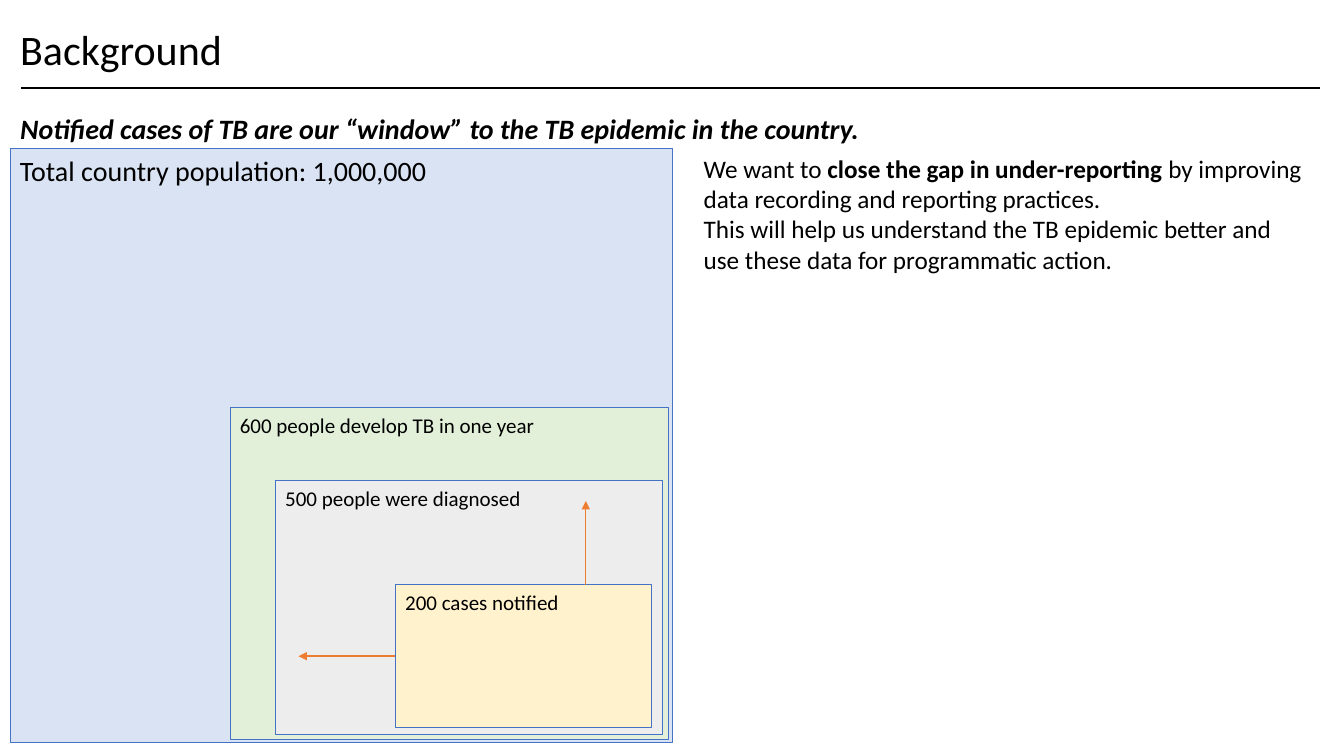
from dataclasses import dataclass

from lxml import etree
from pptx import Presentation
from pptx.dml.color import RGBColor
from pptx.enum.shapes import MSO_CONNECTOR, MSO_SHAPE
from pptx.enum.text import MSO_ANCHOR, MSO_AUTO_SIZE, PP_ALIGN
from pptx.oxml.ns import qn
from pptx.shapes.autoshape import Shape
from pptx.shapes.connector import Connector
from pptx.slide import Slide
from pptx.text.text import TextFrame
from pptx.util import Emu, Pt

STRAIGHT = MSO_CONNECTOR.STRAIGHT
RECT = MSO_SHAPE.RECTANGLE
TOP, MIDDLE = MSO_ANCHOR.TOP, MSO_ANCHOR.MIDDLE
GROW, FIXED = MSO_AUTO_SIZE.SHAPE_TO_FIT_TEXT, MSO_AUTO_SIZE.NONE
LEFT = PP_ALIGN.LEFT

SCALE = 9144  # EMU in one px, 100 px to the inch
FONT = "Calibri"
BLACK, BLUE, ORANGE = "000000", "4472C4", "ED7D31"

Place = tuple[int, int, int, int]
Line = list[tuple[str, bool]]


@dataclass
class Group:
    place: Place
    fill: str
    label: str
    width: int
    height: int = 35
    size: int = 15


@dataclass
class Stroke:
    start: tuple[int, int]
    end: tuple[int, int]
    color: str
    weight: float
    arrow: bool = False


GROUPS = [
    Group((10, 147, 657, 589), "DAE3F3", "Total country population: 1,000,000", 450, 44, 20),
    Group((228, 404, 435, 330), "E2F0D9", "600 people develop TB in one year", 384),
    Group((273, 477, 384, 252), "EDEDED", "500 people were diagnosed", 308),
    Group((392, 580, 254, 142), "FFF2CC", "200 cases notified", 209),
]
RULE = Stroke((21, 87), (1309, 87), BLACK, 1.5)
RISE = Stroke((581, 580), (581, 497), ORANGE, 1, True)
REACH = Stroke((392, 651), (296, 651), ORANGE, 1, True)

HEADING: list[Line] = [[("Background", False)]]
LEAD: list[Line] = [[("Notified cases of TB are our “window” to the TB epidemic in the country.", True)]]
AIM: list[Line] = [
    [("We want to ", False), ("close the gap in under-reporting ", True),
     ("by improving data recording and reporting practices.", False)],
    [("This will help us understand the TB epidemic better and use these data "
      "for programmatic action.", False)],
]


def px(count: int) -> Emu:
    return Emu(count * SCALE)


def paint(code: str) -> RGBColor:
    return RGBColor.from_string(code)


def move(shape: Shape, place: Place) -> None:
    shape.left, shape.top, shape.width, shape.height = map(px, place)


def write(frame: TextFrame, lines: list[Line], *, size: int, italic: bool = False,
          fit: MSO_AUTO_SIZE = GROW, anchor: MSO_ANCHOR = TOP, pitch: float = 1.0) -> None:
    frame.word_wrap = True
    frame.auto_size = fit
    frame.vertical_anchor = anchor
    for rank, line in enumerate(lines):
        para = frame.paragraphs[0] if rank == 0 else frame.add_paragraph()
        props = para._p.get_or_add_pPr()
        props.set("marL", "0")
        props.set("indent", "0")
        etree.SubElement(props, qn("a:buNone"))
        para.alignment = LEFT
        para.line_spacing = pitch
        para.space_before = Pt(0)
        for text, bold in line:
            run = para.add_run()
            run.text = text
            font = run.font
            font.name, font.size = FONT, Pt(size)
            font.bold, font.italic = bold, italic
            font.color.rgb = paint(BLACK)


def add_text(slide: Slide, place: Place, lines: list[Line], size: int) -> None:
    box = slide.shapes.add_textbox(*map(px, place))
    write(box.text_frame, lines, size=size)


def add_group(slide: Slide, group: Group) -> Shape:
    shape = slide.shapes.add_shape(RECT, *map(px, group.place))
    shape.shadow.inherit = False
    shape.fill.solid()
    shape.fill.fore_color.rgb = paint(group.fill)
    shape.line.color.rgb = paint(BLUE)
    shape.line.width = Pt(0.5)
    left, top = group.place[:2]
    add_text(slide, (left, top, group.width, group.height), [[(group.label, False)]], group.size)
    return shape


def add_stroke(slide: Slide, stroke: Stroke) -> Connector:
    line = slide.shapes.add_connector(STRAIGHT, *map(px, stroke.start + stroke.end))
    line.line.color.rgb = paint(stroke.color)
    line.line.width = Pt(stroke.weight)
    if stroke.arrow:
        etree.SubElement(line.line._get_or_add_ln(), qn("a:tailEnd"), type="triangle")
    etree.SubElement(line._element.spPr, qn("a:effectLst"))
    return line


def main() -> None:
    deck = Presentation()
    deck.slide_width, deck.slide_height = px(1333), px(750)
    slide = deck.slides.add_slide(deck.slide_layouts[1])

    # Title and lead sentence
    title, body = slide.shapes.title, slide.placeholders[1]
    move(title, (10, 9, 1310, 85))
    write(title.text_frame, HEADING, size=30, fit=FIXED, anchor=MIDDLE, pitch=0.9)
    move(body, (10, 109, 1310, 640))
    write(body.text_frame, LEAD, size=20, italic=True, fit=FIXED, pitch=0.9)
    add_stroke(slide, RULE)

    # Nested groups, from all people down to notified cases
    boxes = [add_group(slide, group) for group in GROUPS]

    # Arrows that widen the window
    add_stroke(slide, RISE)
    add_stroke(slide, REACH).begin_connect(boxes[-1], 1)

    # Aim at the right
    add_text(slide, (688, 147, 621, 131), AIM, 18)

    deck.save("out.pptx")


if __name__ == "__main__":
    main()
